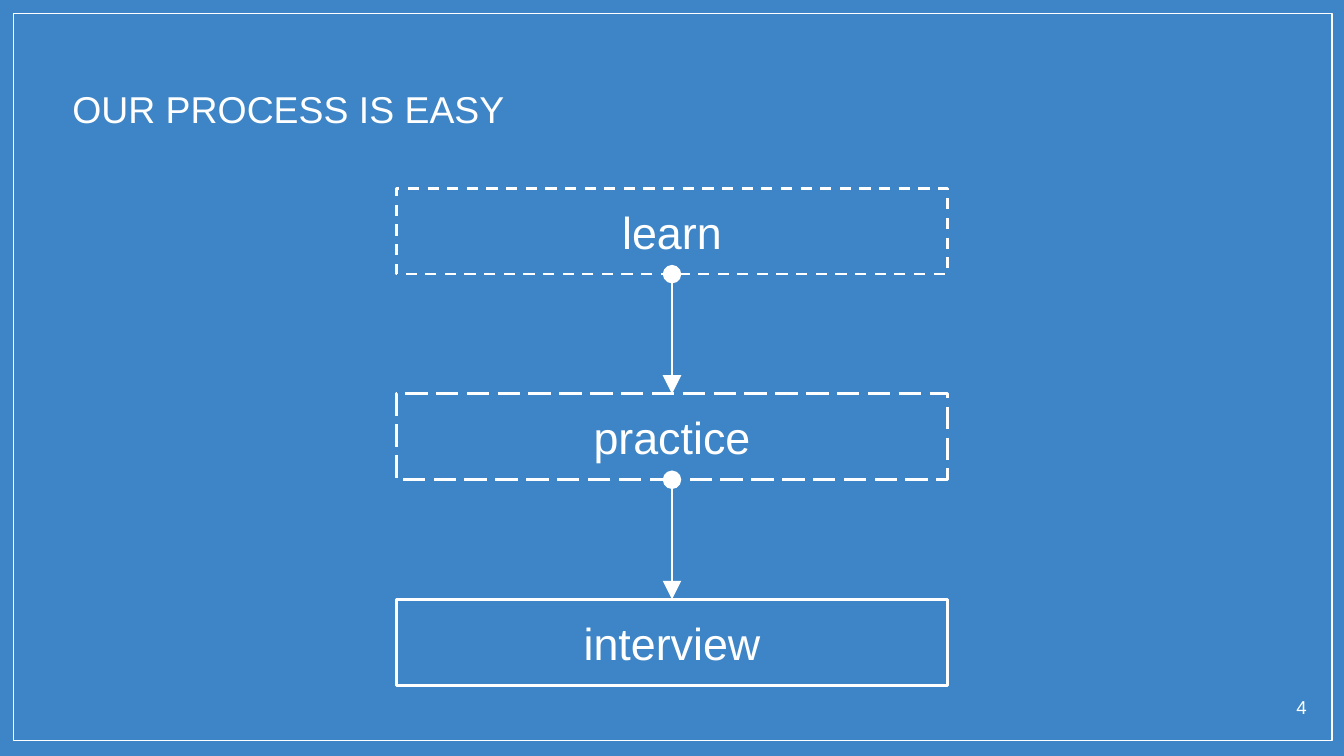
from lxml import etree
from pptx import Presentation
from pptx.dml.color import RGBColor
from pptx.enum.dml import MSO_LINE
from pptx.enum.shapes import MSO_CONNECTOR, MSO_SHAPE
from pptx.enum.text import MSO_ANCHOR, PP_ALIGN
from pptx.oxml.ns import qn
from pptx.util import Inches, Pt

RECT = MSO_SHAPE.RECTANGLE
STRAIGHT = MSO_CONNECTOR.STRAIGHT
DASH, LONG, SOLID = MSO_LINE.DASH, MSO_LINE.LONG_DASH, MSO_LINE.SOLID
TOP, MIDDLE = MSO_ANCHOR.TOP, MSO_ANCHOR.MIDDLE
LEFT, CENTER, RIGHT = PP_ALIGN.LEFT, PP_ALIGN.CENTER, PP_ALIGN.RIGHT
BLUE, WHITE = "3D85C6", "FFFFFF"
STEPS = [("learn", DASH), ("practice", LONG), ("interview", SOLID)]


def paint(color, value):
    color.rgb = RGBColor.from_string(value)


def write(shape, text, size, align, anchor):
    frame = shape.text_frame
    frame.word_wrap = True
    frame.vertical_anchor = anchor
    frame.margin_left = frame.margin_right = Inches(0.1)
    frame.margin_top = frame.margin_bottom = Inches(0.1)
    line = frame.paragraphs[0]
    line.text = text
    line.alignment = align
    line.font.name = "Arial"
    line.font.size = Pt(size)
    paint(line.font.color, WHITE)


def add_label(slide, box, text, size, align):
    label = slide.shapes.add_textbox(*map(Inches, box))
    write(label, text, size, align, TOP)


def add_frame(slide, box, width):
    frame = slide.shapes.add_shape(RECT, *map(Inches, box))
    frame.shadow.inherit = False
    frame.fill.background()
    paint(frame.line.color, WHITE)
    frame.line.width = Pt(width)
    return frame


def add_arrow(slide, x, start, end):
    arrow = slide.shapes.add_connector(
        STRAIGHT, Inches(x), Inches(start), Inches(x), Inches(end))
    paint(arrow.line.color, WHITE)
    arrow.line.width = Pt(0.75)
    props = arrow.line._get_or_add_ln()
    for tag, kind in (("a:headEnd", "oval"), ("a:tailEnd", "triangle")):
        etree.SubElement(props, qn(tag), type=kind, w="lg", len="lg")
    etree.SubElement(arrow._element.spPr, qn("a:effectLst"))


def add_flow(slide, box):
    left, top, width, height = box
    tall = 0.64
    pitch = (height - tall) / (len(STEPS) - 1)
    for i, (text, dash) in enumerate(STEPS):
        y = top + i * pitch
        step = add_frame(slide, (left, y, width, tall), 1.5)
        step.line.dash_style = dash
        write(step, text, 24, CENTER, MIDDLE)
    for i in range(len(STEPS) - 1):
        y = top + i * pitch
        add_arrow(slide, left + width / 2, y + tall, y + pitch)


def main():
    deck = Presentation()
    deck.slide_width = Inches(10)
    deck.slide_height = deck.slide_width * 9 // 16
    slide = deck.slides.add_slide(deck.slide_layouts[6])
    fill = slide.background.fill
    fill.solid()
    paint(fill.fore_color, BLUE)
    add_frame(slide, (0.1, 0.1, 9.81, 5.41), 0.75)
    add_label(slide, (0.44, 0.54, 9, 0.45), "OUR PROCESS IS EASY", 20, LEFT)
    add_flow(slide, (2.95, 1.4, 4.1, 3.7))
    add_label(slide, (9.32, 5.09, 0.5, 0.32), "4", 10, RIGHT)
    deck.save("out.pptx")


if __name__ == "__main__":
    main()
